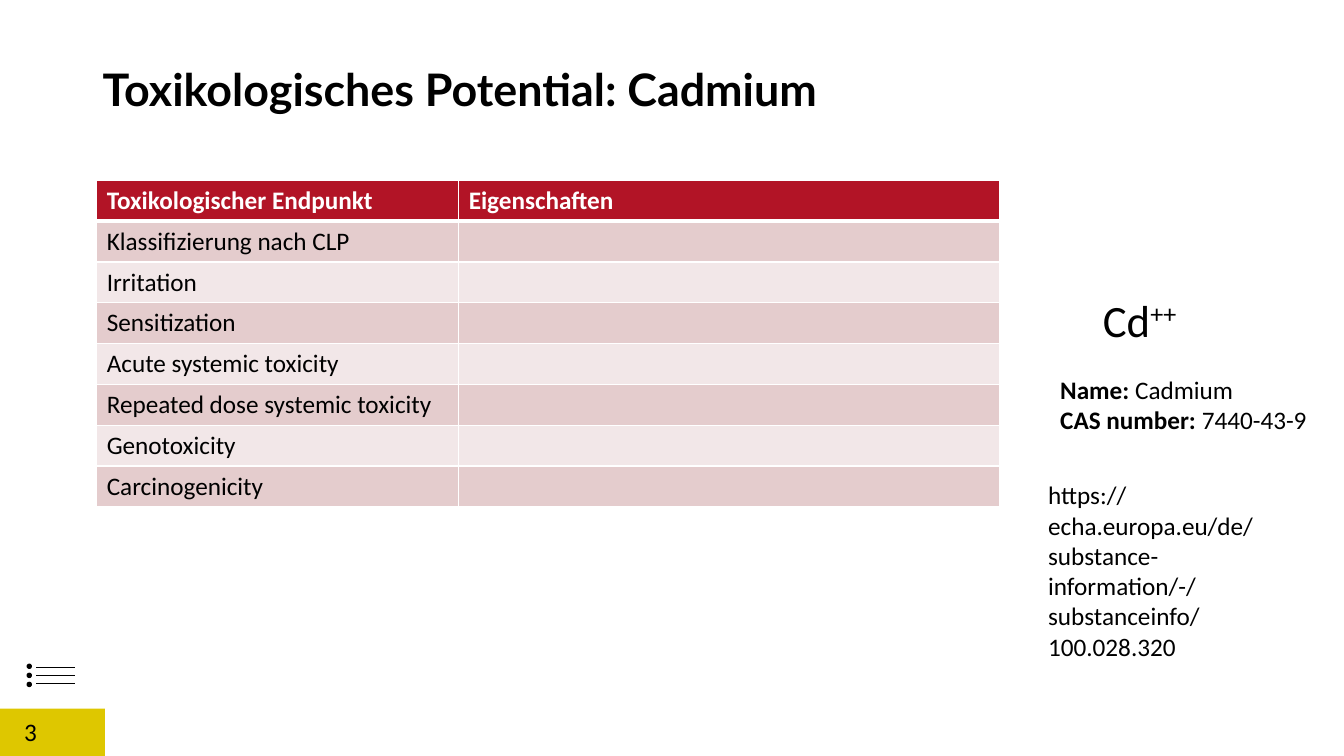
from lxml import etree
from pptx import Presentation
from pptx import util as u
from pptx.dml.color import RGBColor
from pptx.enum import shapes, text
from pptx.oxml import ns

WIDTH, HEIGHT = u.Inches(13.333), u.Inches(7.5)
BLACK = RGBColor(0x00, 0x00, 0x00)
WHITE = RGBColor(0xFF, 0xFF, 0xFF)
RED = RGBColor(0xB2, 0x14, 0x26)
ROSE = RGBColor(0xE4, 0xCC, 0xCD)
PALE_ROSE = RGBColor(0xF2, 0xE7, 0xE8)
YELLOW = RGBColor(0xDE, 0xC7, 0x00)

COLUMN_SHARES = (26.93, 40.28)
ENDPOINTS = [
    ("Toxikologischer Endpunkt", "Eigenschaften"),
    ("Klassifizierung nach CLP", ""),
    ("Irritation", ""),
    ("Sensitization", ""),
    ("Acute systemic toxicity", ""),
    ("Repeated dose systemic toxicity", ""),
    ("Genotoxicity", ""),
    ("Carcinogenicity", ""),
]


def across(percent):
    return u.Emu(round(WIDTH * percent / 100))


def down(percent):
    return u.Emu(round(HEIGHT * percent / 100))


def area(left, top, width, height):
    """Turn percentages of the slide into lengths."""
    return across(left), down(top), across(width), down(height)


def style(font, size=18, bold=False, color=BLACK, name="Calibri"):
    font.name, font.size, font.bold = name, u.Pt(size), bold
    font.color.rgb = color


def add_text(page, place, lines):
    """Each line is a list of (words, font options) pairs."""
    box = page.shapes.add_textbox(*place)
    frame = box.text_frame
    frame.word_wrap = True
    for number, spans in enumerate(lines):
        para = frame.add_paragraph() if number else frame.paragraphs[0]
        for words, options in spans:
            span = para.add_run()
            span.text = words
            style(span.font, **options)
    return frame


def add_solid(page, kind, place, color):
    shape = page.shapes.add_shape(kind, *place)
    shape.shadow.inherit = False
    shape.fill.solid()
    shape.fill.fore_color.rgb = color
    shape.line.fill.background()
    return shape


def add_rule(page, left, right, top):
    rule = page.shapes.add_connector(
        shapes.MSO_CONNECTOR.STRAIGHT, across(left), down(top), across(right), down(top))
    rule.line.color.rgb = BLACK
    rule.line.width = u.Pt(0.5)
    etree.SubElement(rule._element.spPr, ns.qn("a:effectLst"))


def add_list_icon(page):
    for row in range(3):
        add_rule(page, 2.7, 5.55, 88.27 + 1.07 * row)
        dot = add_solid(page, shapes.MSO_SHAPE.OVAL,
                        area(2.03, 87.87 + 1.2 * row, 0.3, 0.53), BLACK)
        dot.line.color.rgb = BLACK
        dot.line.width = u.Pt(1)


def add_borders(cell, bottom):
    properties = cell._tc.get_or_add_tcPr()
    widths = {"lnL": 1, "lnR": 1, "lnT": 1, "lnB": bottom}
    for position, (side, width) in enumerate(widths.items()):
        edge = etree.Element(ns.qn(f"a:{side}"), w=str(u.Pt(width)))
        fill = etree.SubElement(edge, ns.qn("a:solidFill"))
        etree.SubElement(fill, ns.qn("a:srgbClr"), val=str(WHITE))
        properties.insert(position, edge)


def add_endpoint_table(page):
    place = area(7.2, 23.87, sum(COLUMN_SHARES), 43.2)
    table = page.shapes.add_table(len(ENDPOINTS), len(COLUMN_SHARES), *place).table
    for column, share in zip(table.columns, COLUMN_SHARES):
        column.width = across(share)
    for row, entries in enumerate(ENDPOINTS):
        header = row == 0
        fill = RED if header else (ROSE if row % 2 else PALE_ROSE)
        for column, words in enumerate(entries):
            cell = table.cell(row, column)
            cell.text = words
            style(cell.text_frame.paragraphs[0].font, bold=header,
                  color=WHITE if header else BLACK)
            cell.fill.solid()
            cell.fill.fore_color.rgb = fill
            add_borders(cell, bottom=3 if header else 1)


def add_title(page, words):
    frame = add_text(page, area(6.9, 6.4, 58.2, 9.6),
                     [[(words, {"size": 32, "bold": True, "name": "Lato"})]])
    frame.vertical_anchor = text.MSO_ANCHOR.BOTTOM
    frame.paragraphs[0].line_spacing = 0.9


def add_ion(page):
    large = {"size": 32}
    frame = add_text(page, area(76.65, 38, 16.28, 8.53), [[("Cd", large), ("++", large)]])
    para = frame.paragraphs[0]
    para.alignment = text.PP_ALIGN.CENTER
    para.runs[1]._r.get_or_add_rPr().set("baseline", "30000")


def main():
    deck = Presentation()
    deck.slide_width, deck.slide_height = WIDTH, HEIGHT
    page = deck.slides.add_slide(deck.slide_layouts[6])
    add_list_icon(page)
    add_solid(page, shapes.MSO_SHAPE.RECTANGLE, area(0, 93.73, 7.8, 6.27), YELLOW)
    add_title(page, "Toxikologisches Potential: Cadmium")
    add_text(page, area(1.05, 94.13, 6.68, 5.87), [[("3", {})]])
    add_endpoint_table(page)
    label = {"bold": True}
    add_text(page, area(78.15, 48.8, 20.25, 9.47), [
        [("Name: ", label), ("Cadmium", {})],
        [("CAS number: ", label), ("7440-43-9", {})],
    ])
    add_ion(page)
    address = "https://echa.europa.eu/de/substance-information/-/substanceinfo/100.028.320"
    add_text(page, area(77.25, 62.8, 19.65, 21.6), [[(address, {})]])
    deck.save("out.pptx")


if __name__ == "__main__":
    main()
